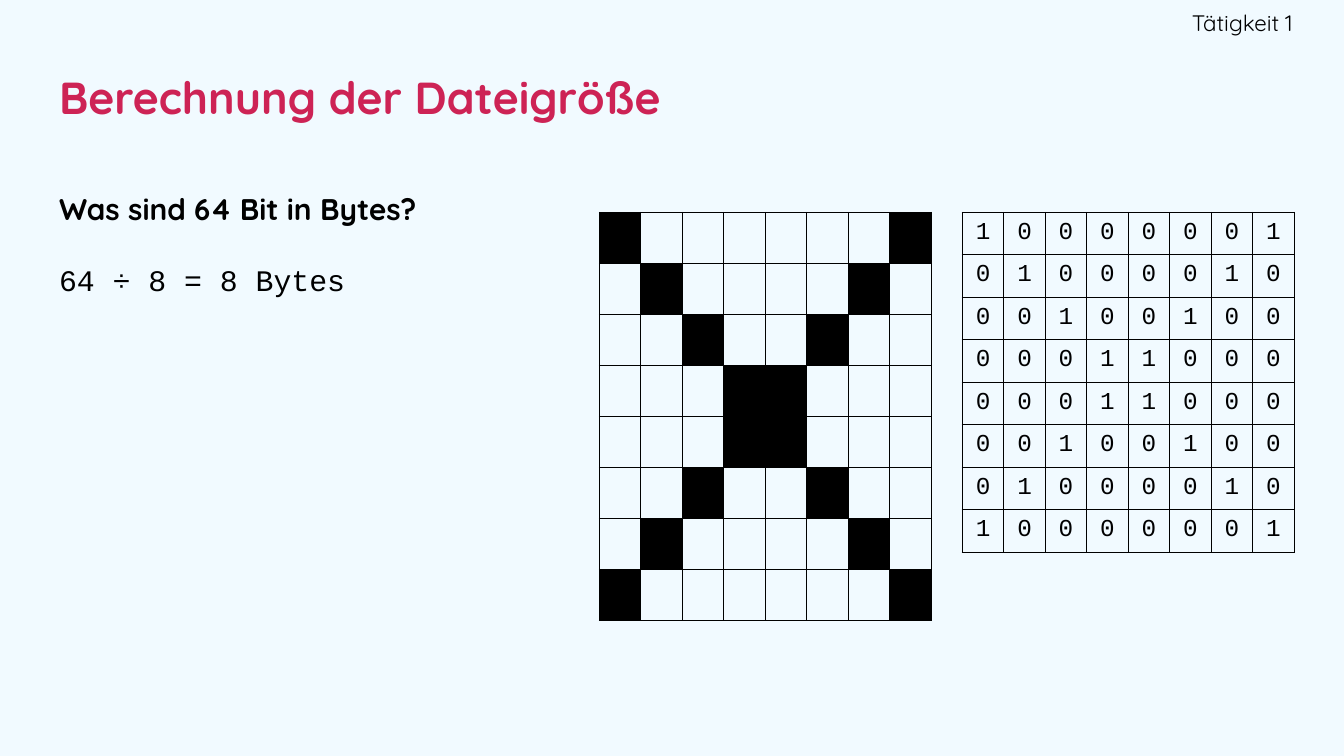
"""Build a slide that works out the file size of an 8 by 8 bitmap."""
from lxml.etree import SubElement
from pptx import Presentation
from pptx.dml.color import RGBColor
from pptx.enum.text import MSO_ANCHOR, MSO_AUTO_SIZE, PP_ALIGN
from pptx.oxml.ns import qn
from pptx.util import Inches, Pt

COLORS = {"background": "F1FAFF", "heading": "CD2355", "ink": "000000"}
HEADING_FONT = "Quicksand"
CODE_FONT = "Courier New"
GRID_SIZE = 8
GRID_WIDTH = 2.47
BORDER_WIDTH = Pt(0.75)


class SlideBuilder:
    def __init__(self, presentation):
        self.slide = presentation.slides.add_slide(presentation.slide_layouts[1])
        fill = self.slide.background.fill
        fill.solid()
        fill.fore_color.rgb = self.color("background")

    def color(self, name):
        return RGBColor.from_string(COLORS[name])

    def add_run(self, paragraph, text, size, font=HEADING_FONT, color="ink", bold=False):
        run = paragraph.add_run()
        run.text = text
        run.font.name = font
        run.font.size = Pt(size)
        run.font.bold = bold
        run.font.color.rgb = self.color(color)

    def set_frame(self, shape, left, top, width, height, anchor, right_margin=0.1):
        shape.left, shape.top = Inches(left), Inches(top)
        shape.width, shape.height = Inches(width), Inches(height)
        frame = shape.text_frame
        frame.word_wrap = True
        frame.auto_size = MSO_AUTO_SIZE.NONE
        frame.vertical_anchor = anchor
        frame.margin_left = frame.margin_top = frame.margin_bottom = Inches(0.1)
        frame.margin_right = Inches(right_margin)
        return frame

    def add_title(self, text):
        frame = self.set_frame(self.slide.shapes.title, 0.34, 0.34, 9.32, 0.76, MSO_ANCHOR.MIDDLE)
        paragraph = frame.paragraphs[0]
        paragraph.alignment = PP_ALIGN.LEFT
        self.add_run(paragraph, text, 24, color="heading", bold=True)

    def add_label(self, text):
        shape = self.slide.shapes.add_textbox(0, 0, 0, 0)
        frame = self.set_frame(shape, 7.48, 0, 2.14, 0.34, MSO_ANCHOR.MIDDLE, right_margin=0)
        paragraph = frame.paragraphs[0]
        paragraph.alignment = PP_ALIGN.RIGHT
        self.add_run(paragraph, text, 12)

    def add_body(self, question, answer):
        frame = self.set_frame(self.slide.placeholders[1], 0.34, 1.28, 3.9, 4, MSO_ANCHOR.TOP)
        lines = [(question, HEADING_FONT, True, 0), (answer, CODE_FONT, False, 16)]
        for index, (text, font, bold, space) in enumerate(lines):
            paragraph = frame.add_paragraph() if index else frame.paragraphs[0]
            paragraph.line_spacing = 1.15
            paragraph.space_before = Pt(space)
            properties = paragraph._p.get_or_add_pPr()
            properties.set("marL", "0")
            properties.set("indent", "0")
            SubElement(properties, qn("a:buNone"))
            self.add_run(paragraph, text, 16, font, bold=bold)

    def add_borders(self, cell):
        properties = cell._tc.get_or_add_tcPr()
        for side in ("a:lnL", "a:lnR", "a:lnT", "a:lnB"):
            line = SubElement(properties, qn(side), w=str(BORDER_WIDTH))
            fill = SubElement(line, qn("a:solidFill"))
            SubElement(fill, qn("a:srgbClr"), val=COLORS["ink"])

    def add_grid(self, left, height, bits, show_digits):
        table = self.slide.shapes.add_table(
            GRID_SIZE, GRID_SIZE, Inches(left), Inches(1.58), Inches(GRID_WIDTH), Inches(height)
        ).table
        table.first_row = table.horz_banding = False
        margin = Inches(0.05 if show_digits else 0)
        for column in table.columns:
            column.width = Inches(GRID_WIDTH / GRID_SIZE)
        for row, row_bits in zip(table.rows, bits):
            row.height = Inches(height / GRID_SIZE)
            for cell, bit in zip(row.cells, row_bits):
                cell.margin_left = cell.margin_right = margin
                cell.margin_top = cell.margin_bottom = margin
                self.add_borders(cell)
                if bit and not show_digits:
                    cell.fill.solid()
                    cell.fill.fore_color.rgb = self.color("ink")
                else:
                    cell.fill.background()
                if show_digits:
                    paragraph = cell.text_frame.paragraphs[0]
                    paragraph.alignment = PP_ALIGN.CENTER
                    self.add_run(paragraph, str(bit), 13, CODE_FONT)


def main():
    presentation = Presentation()
    presentation.slide_width = Inches(10)
    presentation.slide_height = Inches(10 * 9 / 16)
    last = GRID_SIZE - 1
    cross = [
        [int(column in (row, last - row)) for column in range(GRID_SIZE)]
        for row in range(GRID_SIZE)
    ]
    builder = SlideBuilder(presentation)
    builder.add_body("Was sind 64 Bit in Bytes?", "64 ÷ 8 = 8 Bytes")
    builder.add_title("Berechnung der Dateigröße")
    builder.add_label("Tätigkeit 1")
    builder.add_grid(4.46, 3.04, cross, show_digits=False)
    builder.add_grid(7.16, 2.53, cross, show_digits=True)
    presentation.save("out.pptx")


if __name__ == "__main__":
    main()
